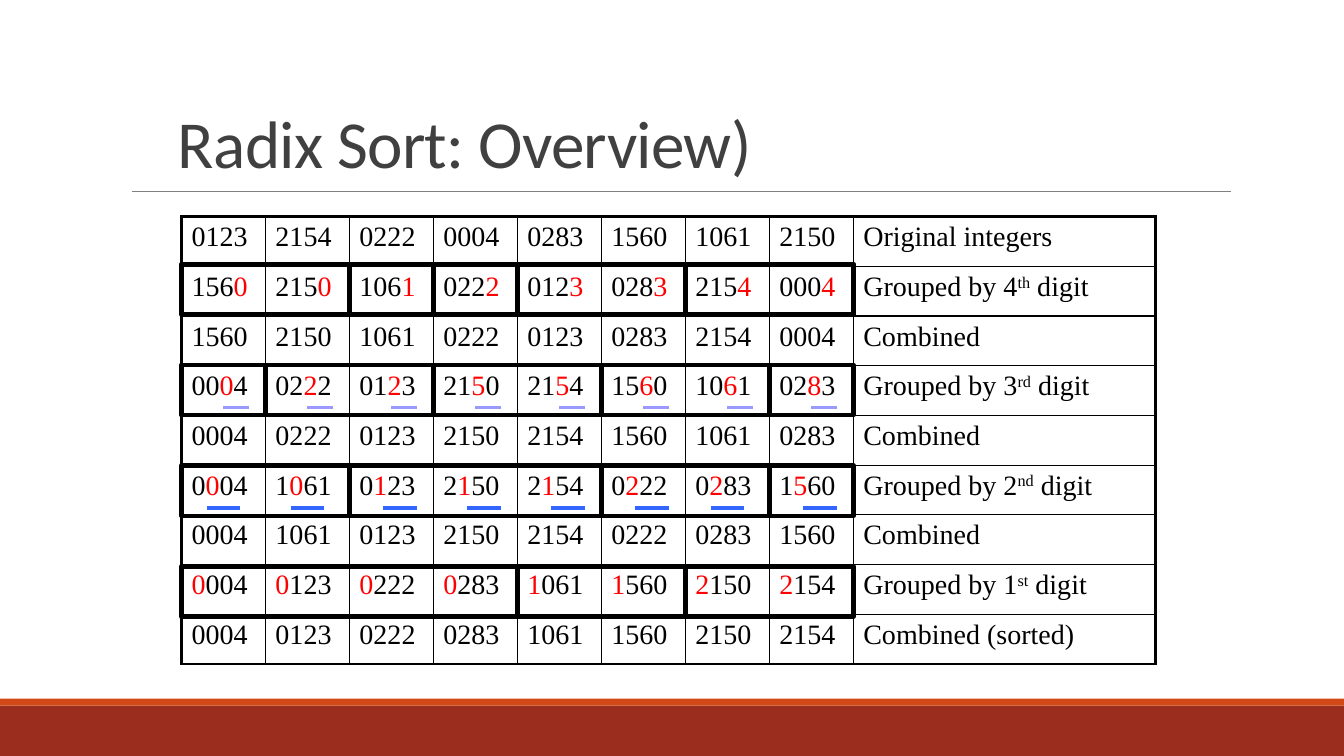
from itertools import groupby

from lxml import etree
from pptx import Presentation
from pptx.dml.color import RGBColor
from pptx.enum import shapes, text
from pptx.oxml import ns
from pptx.util import Pt

LEFT, TOP, COL, ROW = 129.6, 154.8, 60, 35.5
LABEL_WIDTH = 216
GROUP_TOP, GROUP_PITCH, GROUP_HEIGHT = 188.6, 72, 36
NUMBERS = ["0123", "2154", "0222", "0004", "0283", "1560", "1061", "2150"]
PASSES = [(4, "th"), (3, "rd"), (2, "nd"), (1, "st")]
BLACK, RED = "000000", "FF0000"


def rgb(value):
    return RGBColor.from_string(value)


class SlideBuilder:
    title_font, table_font = "Calibri", "Times New Roman"

    def __init__(self, slide):
        self.s = slide

    def rect(self, x, y, w, h, fill=None, line=None, weight=1):
        sp = self.s.shapes.add_shape(
            shapes.MSO_SHAPE.RECTANGLE, Pt(x), Pt(y), Pt(w), Pt(h))
        sp.shadow.inherit = False
        if fill:
            sp.fill.solid()
            sp.fill.fore_color.rgb = rgb(fill)
        else:
            sp.fill.background()
        if line:
            sp.line.color.rgb = rgb(line)
            sp.line.width = Pt(weight)
        else:
            sp.line.fill.background()

    def hline(self, x, y, w, color, weight):
        ln = self.s.shapes.add_connector(
            shapes.MSO_CONNECTOR.STRAIGHT, Pt(x), Pt(y), Pt(x + w), Pt(y))
        ln.line.color.rgb = rgb(color)
        ln.line.width = Pt(weight)
        etree.SubElement(ln._element.spPr, ns.qn("a:effectLst"))

    def title(self, words, x, y, w, h):
        tf = self.s.shapes.add_textbox(Pt(x), Pt(y), Pt(w), Pt(h)).text_frame
        tf.word_wrap = True
        tf.vertical_anchor = text.MSO_ANCHOR.BOTTOM
        p = tf.paragraphs[0]
        p.line_spacing = 0.85
        r = p.add_run()
        r.text = words
        r.font.name, r.font.size = self.title_font, Pt(48)
        r.font.color.rgb = rgb("404040")
        r.font._element.set("spc", "-50")

    def table(self, rows, x, y, widths, row_height):
        """Draw rows of cells; a cell is a list of (text, colour, baseline) runs."""
        tbl = self.s.shapes.add_table(
            len(rows), len(widths), Pt(x), Pt(y),
            Pt(sum(widths)), Pt(row_height * len(rows))).table
        tbl.first_row = tbl.horz_banding = False
        for col, width in zip(tbl.columns, widths):
            col.width = Pt(width)
        for i, row in enumerate(rows):
            tbl.rows[i].height = Pt(row_height)
            for j, runs in enumerate(row):
                cell = tbl.cell(i, j)
                self.fill_cell(cell, runs)
                self.borders(cell, {"L": j == 0, "R": j == len(widths) - 1,
                                    "T": i == 0, "B": i == len(rows) - 1})
                cell.fill.background()

    def fill_cell(self, cell, runs):
        p = cell.text_frame.paragraphs[0]
        p.space_before = Pt(4)
        p.font.name, p.font.size = self.table_font, Pt(20)
        for words, color, baseline in runs:
            r = p.add_run()
            r.text = words
            r.font.color.rgb = rgb(color)
            if baseline:
                r.font._element.set("baseline", str(baseline * 1000))

    def borders(self, cell, outer):
        """Rule all four sides, heavier where a side is on the table's edge."""
        tc_pr = cell._tc.get_or_add_tcPr()
        for side, is_outer in outer.items():
            ln = etree.SubElement(tc_pr, ns.qn("a:ln" + side),
                                  w=str(Pt(2.25 if is_outer else 1)))
            fill = etree.SubElement(ln, ns.qn("a:solidFill"))
            etree.SubElement(fill, ns.qn("a:srgbClr"), val=BLACK)


def plain(words):
    return [(words, BLACK, 0)]


def marked(number, digit):
    """Split a number into runs with one digit in red."""
    parts = [(number[:digit - 1], BLACK, 0), (number[digit - 1], RED, 0),
             (number[digit:], BLACK, 0)]
    return [part for part in parts if part[0]]


def radix_passes():
    """Return (digit, suffix, numbers stably sorted by that digit) per pass."""
    numbers, result = NUMBERS, []
    for digit, suffix in PASSES:
        numbers = sorted(numbers, key=lambda n: n[digit - 1])
        result.append((digit, suffix, numbers))
    return result


def table_rows(passes):
    rows = [[plain(n) for n in NUMBERS] + [plain("Original integers")]]
    for digit, suffix, numbers in passes:
        label = [(f"Grouped by {digit}", BLACK, 0), (suffix, BLACK, 30),
                 (" digit", BLACK, 0)]
        combined = "Combined (sorted)" if digit == 1 else "Combined"
        rows.append([marked(n, digit) for n in numbers] + [label])
        rows.append([plain(n) for n in numbers] + [plain(combined)])
    return rows


def main():
    prs = Presentation()
    prs.slide_width, prs.slide_height = Pt(960), Pt(540)
    b = SlideBuilder(prs.slides.add_slide(prs.slide_layouts[6]))

    b.rect(0, 504, 960, 36, fill="9B2D1F")
    b.rect(0, 499, 960, 5, fill="D34817")
    b.hline(94.5, 136.8, 784.5, "808080", 0.5)
    b.title("Radix Sort: Overview)", 120, 44, 720, 90)

    passes = radix_passes()
    b.table(table_rows(passes), LEFT, TOP,
            [COL] * len(NUMBERS) + [LABEL_WIDTH], ROW)

    for i, (digit, _, numbers) in enumerate(passes):
        y, x = GROUP_TOP + i * GROUP_PITCH, LEFT
        for _, group in groupby(numbers, key=lambda n: n[digit - 1]):
            width = COL * len(list(group))
            b.rect(x, y, width, GROUP_HEIGHT, line=BLACK, weight=3.25)
            x += width

    # Underlines below the digits already sorted: offsets within each column
    underlines = [(1, [30] * 8, 18, "9999FF"),
                  (2, [18, 18, 24, 24, 24, 24, 18, 24], 24, "3366FF")]
    for i, offsets, width, color in underlines:
        y = GROUP_TOP + i * GROUP_PITCH + 30.3
        for j, offset in enumerate(offsets):
            b.hline(LEFT + j * COL + offset, y, width, color, 2.25)

    prs.save("out.pptx")


if __name__ == "__main__":
    main()
